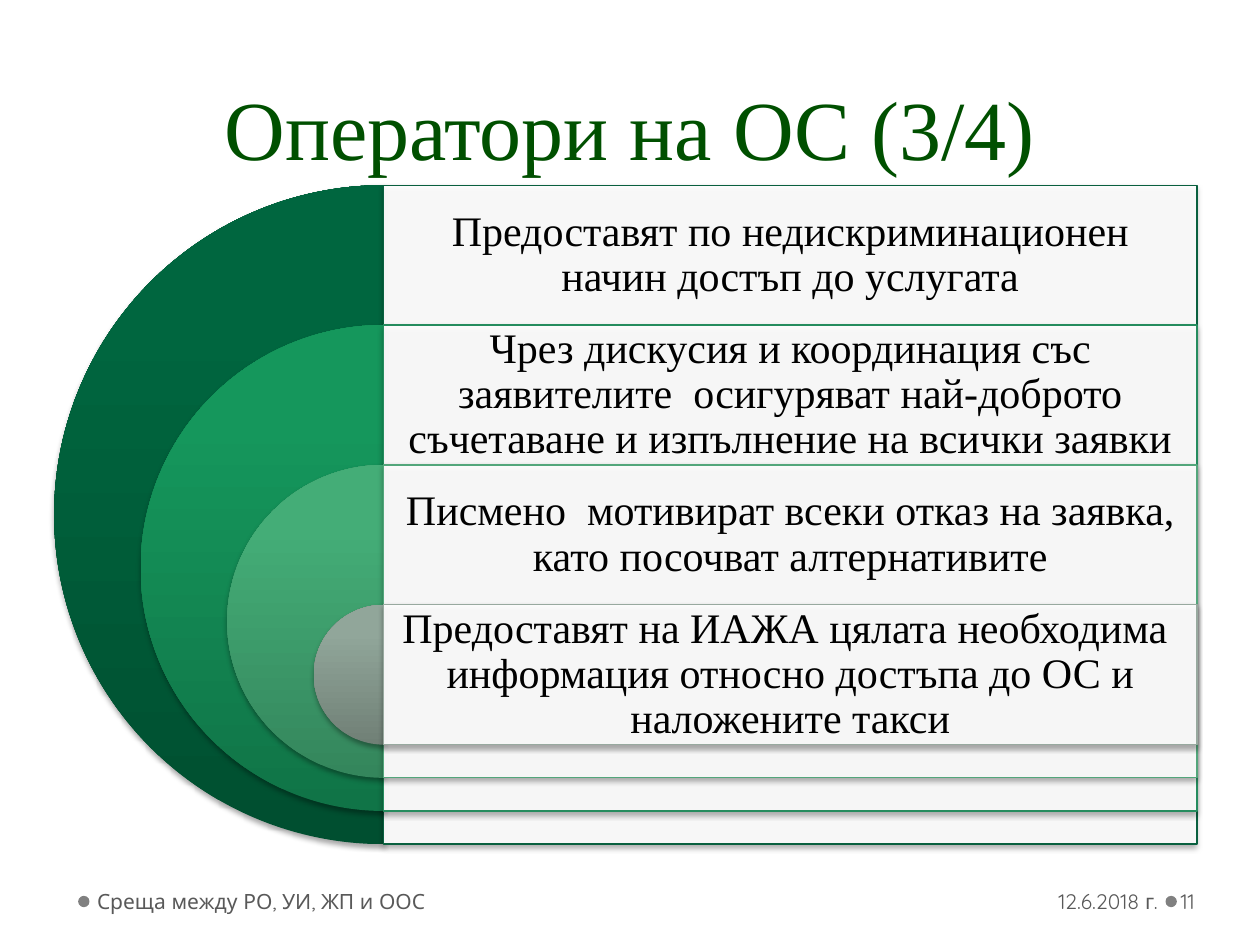
from copy import deepcopy
from dataclasses import dataclass

from lxml import etree
from pptx import Presentation
from pptx.dml.color import RGBColor
from pptx.enum.shapes import MSO_SHAPE
from pptx.enum.text import MSO_ANCHOR, MSO_AUTO_SIZE, PP_ALIGN
from pptx.oxml.ns import qn
from pptx.util import Inches, Pt

PIE, RECT, OVAL = MSO_SHAPE.PIE, MSO_SHAPE.RECTANGLE, MSO_SHAPE.OVAL
MIDDLE, BOTTOM = MSO_ANCHOR.MIDDLE, MSO_ANCHOR.BOTTOM
LEFT, CENTER, RIGHT = PP_ALIGN.LEFT, PP_ALIGN.CENTER, PP_ALIGN.RIGHT
FIXED = MSO_AUTO_SIZE.NONE


@dataclass(frozen=True)
class Theme:
    """Colours, fonts and type sizes."""
    serif: str = "Times New Roman"
    sans: str = "Quicksand"
    head: str = "005000"
    ink: str = "000000"
    panel: str = "FFFFFF"
    foot: str = "595959"
    dot: str = "808080"
    head_size: int = 48
    body_size: int = 24
    foot_size: int = 12


THEME = Theme()
LEVELS = [
    ("Предоставят по недискриминационен начин достъп до услугата",
     ("004F30", "00663F", "00663F"), "09603F"),
    ("Чрез дискусия и координация със заявителите  осигуряват "
     "най-доброто съчетаване и изпълнение на всички заявки",
     ("107447", "15975C", "139A5D"), "258C5E"),
    ("Писмено  мотивират всеки отказ на заявка, като посочват алтернативите",
     ("34865C", "44AD77", "42B078"), "53A67B"),
    ("Предоставят на ИАЖА цялата необходима  информация относно "
     "достъпа до ОС и наложените такси",
     ("708076", "91A69A", "91A79B"), "98A99F"),
]


def color(code):
    """Turn a hex code into a colour."""
    return RGBColor.from_string(code)


def write(frame, text, font, size, tint, align, anchor, pads=(0.1, 0.05, 0.1, 0.05)):
    """Fill a text frame with one styled run and return its paragraph."""
    frame.word_wrap = True
    frame.auto_size = FIXED
    frame.vertical_anchor = anchor
    (frame.margin_left, frame.margin_top,
     frame.margin_right, frame.margin_bottom) = map(Inches, pads)
    para = frame.paragraphs[0]
    para.alignment = align
    run = para.add_run()
    run.text = text
    run.font.name = font
    run.font.size = Pt(size)
    run.font.color.rgb = color(tint)
    return para


def shade(shape):
    """Give a shape a soft shadow below it."""
    shape.shadow.inherit = False
    effects = shape._element.spPr.find(qn("a:effectLst"))
    outer = etree.SubElement(effects, qn("a:outerShdw"), blurRad=str(Pt(3.1)),
                             dist=str(Pt(1.8)), dir="5400000", rotWithShape="0")
    tint = etree.SubElement(outer, qn("a:srgbClr"), val=THEME.ink)
    etree.SubElement(tint, qn("a:alpha"), val="35000")


def add_title(slide, box, text):
    """Place the slide title."""
    title = slide.shapes.title
    title.left, title.top, title.width, title.height = map(Inches, box)
    para = write(title.text_frame, text, THEME.serif, THEME.head_size,
                 THEME.head, CENTER, BOTTOM)
    para.line_spacing = Pt(58)


def add_pie(slide, box, tints):
    """Draw a left half disc with a vertical gradient."""
    pie = slide.shapes.add_shape(PIE, *map(Inches, box))
    pie.adjustments[0], pie.adjustments[1] = 54, 162
    pie.line.fill.background()
    pie.fill.gradient()
    pie.fill.gradient_angle = 90
    stops = pie._element.spPr.find(".//" + qn("a:gsLst"))
    stops.append(deepcopy(stops[-1]))
    for stop, spot, tint in zip(pie.fill.gradient_stops, (0, 0.8, 1), tints):
        stop.position = spot
        stop.color.rgb = color(tint)
    shade(pie)


def add_panel(slide, box, edge):
    """Draw a slightly clear panel with a thin edge."""
    panel = slide.shapes.add_shape(RECT, *map(Inches, box))
    panel.fill.solid()
    panel.fill.fore_color.rgb = color(THEME.panel)
    tint = panel._element.spPr.find(qn("a:solidFill"))[0]
    etree.SubElement(tint, qn("a:alpha"), val="90000")
    panel.line.color.rgb = color(edge)
    panel.line.width = Pt(0.75)
    shade(panel)


def add_target(slide, box, levels):
    """Stack nested half discs, each with its panel and text."""
    left, top, width, height = box
    row = 1.11
    shrink = (height - row) / (len(levels) - 1)
    mid = left + height / 2
    span = left + width - mid
    for rank, (text, tints, edge) in enumerate(levels):
        size = height - rank * shrink
        y = top + rank * row
        add_pie(slide, (mid - size / 2, y, size, size), tints)
        add_panel(slide, (mid, y, span, size), edge)
        label = slide.shapes.add_textbox(*map(Inches, (mid, y, span, row)))
        para = write(label.text_frame, text, THEME.serif, THEME.body_size,
                     THEME.ink, CENTER, MIDDLE, (0.1,) * 4)
        para.line_spacing = 0.9


def add_footer(slide, box):
    """Place the footer texts and their dots."""
    left, top, width, height = box
    parts = [
        ("12.6.2018 г.", 6.24, 2.28, RIGHT, (0.1, 0.05, 0.05, 0.05)),
        ("Среща между РО, УИ, ЖП и ООС", 0, 3.11, LEFT, (0.05, 0.05, 0.1, 0.05)),
        ("11", 8.62, width - 8.62, LEFT, (0.03, 0.05, 0.05, 0.05)),
    ]
    for text, x, wide, align, pads in parts:
        area = slide.shapes.add_textbox(*map(Inches, (left + x, top, wide, height)))
        write(area.text_frame, text, THEME.sans, THEME.foot_size, THEME.foot,
              align, MIDDLE, pads)
    size = 0.09
    for x in (-0.1, 8.53):
        dot = slide.shapes.add_shape(
            OVAL, *map(Inches, (left + x, top + 0.16, size, size)))
        dot.fill.solid()
        dot.fill.fore_color.rgb = color(THEME.dot)
        dot.line.fill.background()
        dot.shadow.inherit = False


def main():
    """Build the slide and save it."""
    deck = Presentation()
    deck.slide_width, deck.slide_height = Inches(10), Inches(7.5)
    slide = deck.slides.add_slide(deck.slide_layouts[5])
    add_title(slide, (0.5, 0.44, 9, 1.02), "Оператори на ОС (3/4)")
    add_target(slide, (0.43, 1.47, 9.07, 5.23), LEVELS)
    add_footer(slide, (0.72, 6.95, 9.23, 0.4))
    deck.save("out.pptx")


if __name__ == "__main__":
    main()
